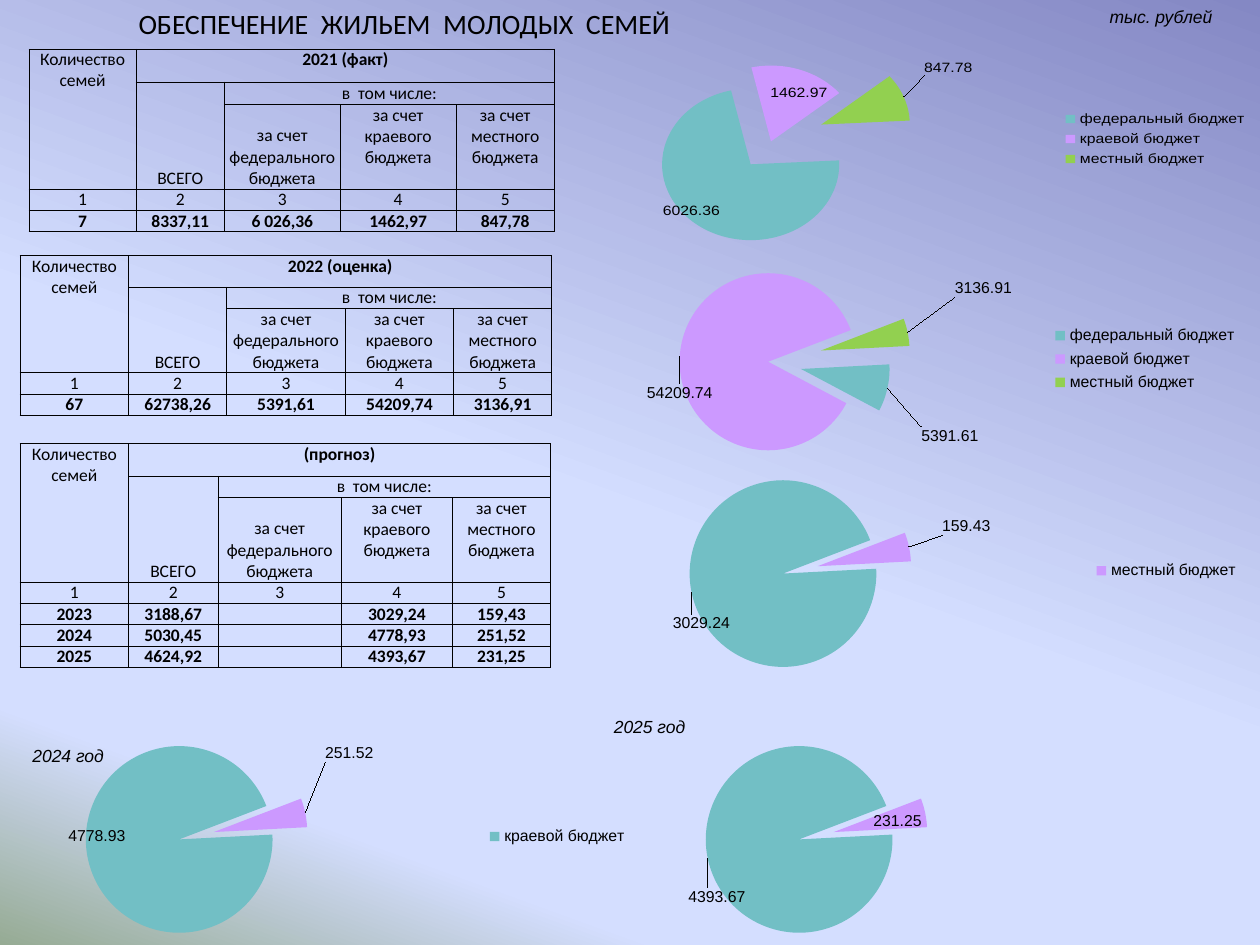
from pptx import Presentation
from pptx import util as u
from pptx.chart import data as chart_data
from pptx.dml.color import RGBColor
from pptx.enum import chart as charts, text
from pptx.oxml import parse_xml
from pptx.oxml.ns import nsdecls, qn

BLACK = RGBColor(0x00, 0x00, 0x00)
TEAL = RGBColor(0x72, 0xBF, 0xC5)
VIOLET = RGBColor(0xCC, 0x99, 0xFF)
GREEN = RGBColor(0x92, 0xD0, 0x50)
BACKDROP = [
    (0, RGBColor(0x84, 0x88, 0xC4)),
    (53, RGBColor(0xD4, 0xDE, 0xFF)),
    (83, RGBColor(0xD4, 0xDE, 0xFF)),
    (100, RGBColor(0x96, 0xAB, 0x94)),
]
SLICE_COLORS = (TEAL, VIOLET, GREEN)
FEDERAL, REGIONAL, LOCAL = "федеральный бюджет", "краевой бюджет", "местный бюджет"
SOURCES = [f"за счет {name} бюджета" for name in ("федерального", "краевого", "местного")]
CENTER, LEFT = text.PP_ALIGN.CENTER, text.PP_ALIGN.LEFT
TOP, BOTTOM = text.MSO_ANCHOR.TOP, text.MSO_ANCHOR.BOTTOM


class HousingSlide:
    """Draws the elements of the housing support slide in one shared style."""

    def __init__(self, presentation):
        self.slide = presentation.slides.add_slide(presentation.slide_layouts[6])
        self.table_font = "Calibri"
        self.chart_font = "Arial"

    def backdrop(self, stops, angle):
        marks = "".join(
            f'<a:gs pos="{position * 1000}"><a:srgbClr val="{color}"/></a:gs>'
            for position, color in stops
        )
        background = parse_xml(
            f'<p:bg {nsdecls("p", "a")}><p:bgPr><a:gradFill rotWithShape="1">'
            f'<a:gsLst>{marks}</a:gsLst><a:lin ang="{angle * 60000}" scaled="0"/>'
            "</a:gradFill><a:effectLst/></p:bgPr></p:bg>"
        )
        self.slide._element.cSld.insert(0, background)

    def add_text(self, paragraph, words, font, size, bold=False, italic=False, align=CENTER):
        paragraph.alignment = align
        run = paragraph.add_run()
        run.text = words
        run.font.name, run.font.size = font, u.Pt(size)
        run.font.bold, run.font.italic = bold, italic
        run.font.color.rgb = BLACK

    def label(self, box, words, font="Arial", size=10, italic=True, align=CENTER, indent=0.1):
        shape = self.slide.shapes.add_textbox(*map(u.Inches, box))
        frame = shape.text_frame
        frame.word_wrap = True
        frame.margin_left = u.Inches(indent)
        self.add_text(frame.paragraphs[0], words, font, size, italic=italic, align=align)

    def style_cell(self, cell):
        cell.margin_left = cell.margin_right = cell.margin_top = cell.margin_bottom = 0
        cell.fill.background()
        properties = cell._tc.get_or_add_tcPr()
        for index, side in enumerate("LRTB"):
            properties.insert(index, parse_xml(
                f'<a:ln{side} {nsdecls("a")} w="6350"><a:solidFill>'
                f'<a:srgbClr val="{BLACK}"/></a:solidFill></a:ln{side}>'
            ))
        cell.text_frame.paragraphs[0]._p.append(
            parse_xml(f'<a:endParaRPr {nsdecls("a")} sz="1000"/>')
        )

    def fill_cell(self, cell, words, bold=False, anchor=BOTTOM):
        cell.vertical_anchor = anchor
        if words:
            self.add_text(cell.text_frame.paragraphs[0], words, self.table_font, 10, bold)

    def budget_table(self, left, top, widths, heights, title, records, source_anchor):
        frame = self.slide.shapes.add_table(
            len(heights), len(widths), u.Inches(left), u.Inches(top),
            u.Inches(sum(widths)), u.Inches(sum(heights)),
        )
        table = frame.table
        table.first_row = table.horz_banding = False
        for column, width in zip(table.columns, widths):
            column.width = u.Inches(width)
        for row, height in zip(table.rows, heights):
            row.height = u.Inches(height)
        for cell in table.iter_cells():
            self.style_cell(cell)
        for first, last in (((0, 0), (2, 0)), ((0, 1), (0, 4)), ((1, 1), (2, 1)), ((1, 2), (1, 4))):
            table.cell(*first).merge(table.cell(*last))
        self.fill_cell(table.cell(0, 0), "Количество семей", anchor=TOP)
        self.fill_cell(table.cell(0, 1), title, True, TOP)
        self.fill_cell(table.cell(1, 1), "ВСЕГО")
        self.fill_cell(table.cell(1, 2), "в  том числе:")
        for column, words in enumerate(SOURCES, 2):
            self.fill_cell(table.cell(2, column), words, anchor=BOTTOM if column == 2 else source_anchor)
        for column in range(5):
            self.fill_cell(table.cell(3, column), str(column + 1))
        for row, record in enumerate(records, 4):
            for column, words in enumerate(record):
                self.fill_cell(table.cell(row, column), words, True)

    def layout(self, **places):
        modes = '<c:layoutTarget val="inner"/><c:xMode val="edge"/><c:yMode val="edge"/>' if "w" in places else ""
        values = "".join(f'<c:{key} val="{value}"/>' for key, value in places.items())
        return parse_xml(
            f'<c:layout {nsdecls("c")}><c:manualLayout>{modes}{values}</c:manualLayout></c:layout>'
        )

    def pie(self, box, names, values, explosions, shifts, legend=True, hidden=None):
        content = chart_data.CategoryChartData()
        content.categories = names
        content.add_series("Series 1", values)
        chart = self.slide.shapes.add_chart(
            charts.XL_CHART_TYPE.PIE, *map(u.Inches, box), content
        ).chart
        chart.has_title = False
        chart.font.name, chart.font.size = self.chart_font, u.Pt(9)
        chart.font.color.rgb = BLACK
        chart.has_legend = legend
        if legend:
            chart.legend.position = charts.XL_LEGEND_POSITION.RIGHT
            chart.legend.include_in_layout = False
        if hidden is not None:
            chart.legend._element.insert(1, parse_xml(
                f'<c:legendEntry {nsdecls("c")}><c:idx val="{hidden}"/><c:delete val="1"/></c:legendEntry>'
            ))
        plot = chart.plots[0]
        plot.vary_by_categories = True
        area = chart._chartSpace.find(".//" + qn("c:plotArea"))
        for old in area.findall(qn("c:layout")):
            area.remove(old)
        area.insert(0, self.layout(x=0.08, y=0.04, w=0.4, h=0.95))
        pie = area.find(qn("c:pieChart"))
        for old in pie.findall(qn("c:firstSliceAng")):
            pie.remove(old)
        pie.append(parse_xml(f'<c:firstSliceAng {nsdecls("c")} val="87"/>'))
        series = plot.series[0]
        labels = series.data_labels
        labels.show_value = True
        labels.number_format, labels.number_format_is_linked = "General", False
        best_fit = charts.XL_LABEL_POSITION.BEST_FIT
        labels.position = best_fit
        for index, (explosion, shift) in enumerate(zip(explosions, shifts)):
            point = series.points[index]
            point.format.fill.solid()
            point.format.fill.fore_color.rgb = SLICE_COLORS[index]
            slice_element = series._element.findall(qn("c:dPt"))[index]
            slice_element.find(qn("c:spPr")).addprevious(
                parse_xml(f'<c:explosion {nsdecls("c")} val="{explosion}"/>')
            )
            if shift:
                point.data_label.position = best_fit
                label = series._element.findall(".//" + qn("c:dLbl"))[-1]
                label.find(qn("c:idx")).addnext(self.layout(x=shift[0], y=shift[1]))


def main():
    presentation = Presentation()
    presentation.slide_width, presentation.slide_height = u.Inches(10), u.Inches(7.5)
    page = HousingSlide(presentation)
    page.backdrop(BACKDROP, 110)

    three, two = (FEDERAL, REGIONAL, LOCAL), (REGIONAL, LOCAL)
    far, near = (38, 0, 61), (0, 38)
    page.pie((0, 5.86, 5.08, 1.56), two, (4778.93, 251.52), near,
             ((0.07, -0.17), (0.02, -0.25)), hidden=1)
    page.label((0, 0, 10, 0.37), "ОБЕСПЕЧЕНИЕ  ЖИЛЬЕМ  МОЛОДЫХ  СЕМЕЙ", "Calibri", 16, False, LEFT, 1.1)
    page.budget_table(
        0.16, 2.03, (0.86, 0.78, 0.94, 0.86, 0.78), (0.25, 0.17, 0.51, 0.17, 0.17), "2022 (оценка)",
        [("67", "62738,26", "5391,61", "54209,74", "3136,91")], BOTTOM)
    page.budget_table(
        0.16, 3.52, (0.86, 0.71, 0.98, 0.88, 0.78), (0.26, 0.17, 0.67) + (0.17,) * 4, "(прогноз)",
        [("2023", "3188,67", "", "3029,24", "159,43"),
         ("2024", "5030,45", "", "4778,93", "251,52"),
         ("2025", "4624,92", "", "4393,67", "231,25")], TOP)
    page.pie((4.61, 0.47, 5.39, 1.48), three, (6026.36, 1462.97, 847.78), far,
             ((0.04, 0), None, (0.02, -0.12)))
    page.pie((4.61, 2.11, 5.31, 1.48), three, (5391.61, 54209.74, 3136.91), far,
             ((0.04, 0.2), (0.06, 0.2), (0.06, -0.18)))
    page.pie((4.77, 3.75, 5.16, 1.56), two, (3029.24, 159.43), near,
             ((0.07, 0.1), (0.04, -0.05)), hidden=0)
    page.label((8.43, 0, 1.57, 0.27), "тыс. рублей")
    page.label((4.37, 5.63, 1.57, 0.27), "2025 год")
    page.label((0, 5.86, 1.08, 0.27), "2024 год")
    page.pie((4.92, 5.86, 5.08, 1.56), ("1", "2"), (4393.67, 231.25), near,
             ((0.07, 0.14), None), legend=False)
    page.budget_table(
        0.23, 0.39, (0.85, 0.7, 0.92, 0.92, 0.78), (0.26, 0.18, 0.67, 0.17, 0.17), "2021 (факт)",
        [("7", "8337,11", "6 026,36", "1462,97", "847,78")], TOP)
    presentation.save("out.pptx")


if __name__ == "__main__":
    main()
